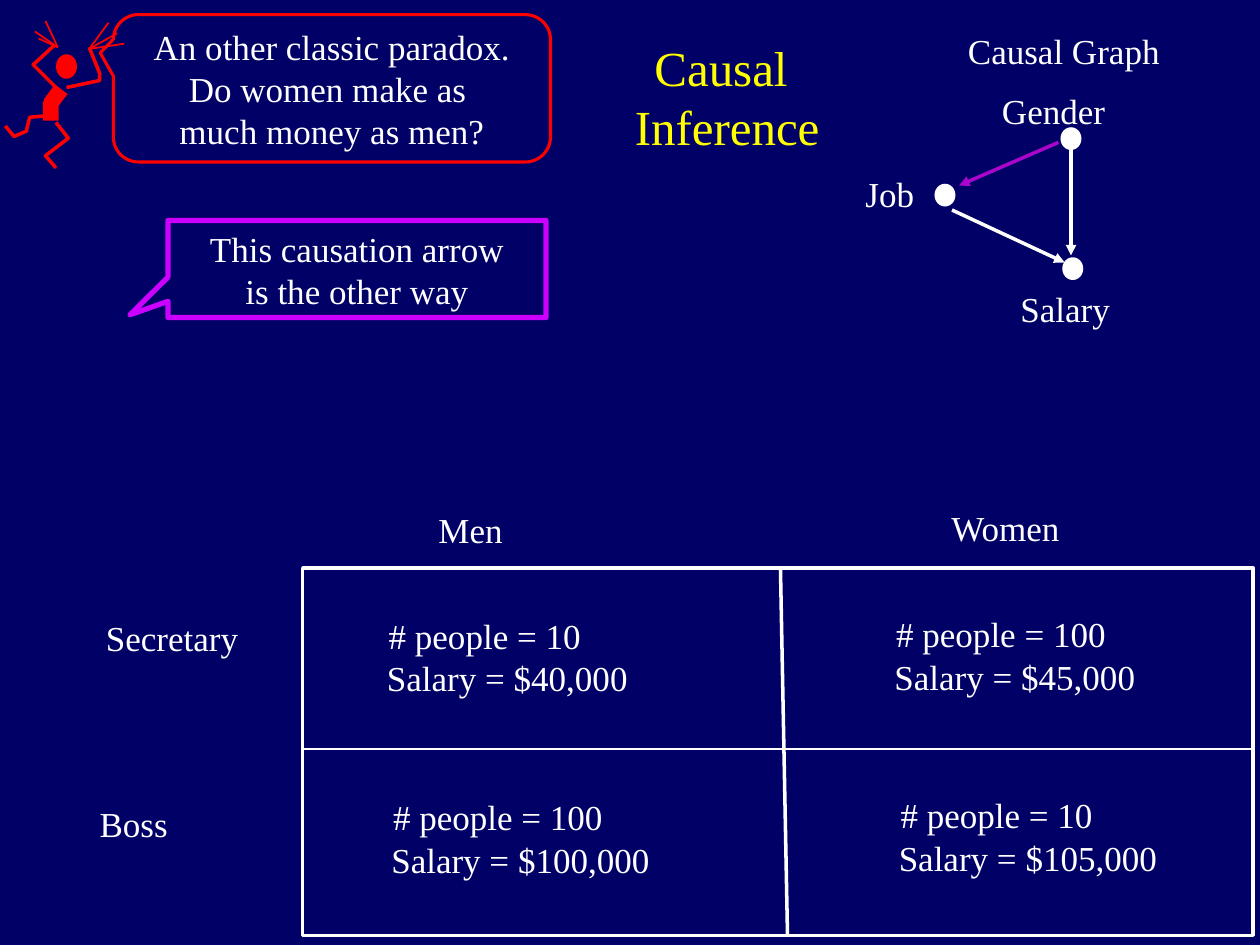
from pptx import Presentation
from pptx.dml.color import RGBColor
from pptx.enum.shapes import MSO_CONNECTOR, MSO_SHAPE
from pptx.enum.text import MSO_ANCHOR as ANCHOR, PP_ALIGN as ALIGN
from pptx.oxml.ns import qn
from pptx.util import Pt
from lxml import etree

COLOURS = {
    "navy": "000066", "white": "FFFFFF", "yellow": "FFFF00",
    "red": "FF0000", "purple": "AA05CB", "magenta": "CC00FF",
}
COLOURS = {name: RGBColor.from_string(value) for name, value in COLOURS.items()}

deck = Presentation()
deck.slide_width, deck.slide_height = Pt(720), Pt(540)
page = deck.slides.add_slide(deck.slide_layouts[6])
page.background.fill.solid()
page.background.fill.fore_color.rgb = COLOURS["navy"]


def write(shape, lines, size=20, colour="white", align=ALIGN.LEFT, spacing=None, wrap=True):
    frame = shape.text_frame
    frame.word_wrap = wrap
    para = frame.paragraphs[0]
    para.alignment = align
    para.line_spacing = spacing
    for number, line in enumerate(lines):
        if number:
            para.add_line_break()
        span = para.add_run()
        span.text = line
        span.font.size = Pt(size)
        span.font.name = "Times New Roman"
        span.font.color.rgb = COLOURS[colour]


def draw_line(start, end, colour="white", width=2, arrow=False):
    line = page.shapes.add_connector(
        MSO_CONNECTOR.STRAIGHT, *[Pt(value) for value in (*start, *end)])
    line.line.color.rgb = COLOURS[colour]
    line.line.width = Pt(width)
    properties = line._element.spPr
    if arrow:
        etree.SubElement(properties.find(qn("a:ln")), qn("a:tailEnd"), type="triangle")
    etree.SubElement(properties, qn("a:effectLst"))


# Title
title = page.shapes.add_textbox(Pt(355), Pt(18), Pt(121), Pt(75))
write(title, ["Causal ", "Inference"], 28, "yellow", ALIGN.CENTER, wrap=False)

# Panicking figure: body and limbs as bent strokes, then hair
for points, width in [
    ([(35, 51), (29, 59), (29, 69)], 9),
    ([(38, 50), (57, 46), (57, 42), (51, 27)], 2),
    ([(33, 51), (19, 37), (31, 26)], 2),
    ([(32, 70), (39, 79), (26, 89), (32, 96)], 2),
    ([(29, 66), (17, 67), (15, 75), (8, 78), (3, 72)], 2),
]:
    builder = page.shapes.build_freeform(*points[0], scale=Pt(1))
    builder.add_line_segments(points[1:], close=False)
    limb = builder.convert_to_shape()
    limb.shadow.inherit = False
    limb.fill.background()
    limb.line.color.rgb = COLOURS["red"]
    limb.line.width = Pt(width)
for root, tips in [
    ((33, 27), [(22, 22), (20, 18), (26, 12)]),
    ((51, 28), [(62, 13), (67, 19), (71, 25)]),
]:
    for tip in tips:
        draw_line(root, tip, "red", 1)

# Speech callouts
for kind, bounds, adjustments, colour, width, lines in [
    (MSO_SHAPE.ROUNDED_RECTANGULAR_CALLOUT, (64.8, 8.4, 249.8, 84.2), (-0.53, -0.24, 0.17),
     "red", 1.75, ["An other classic paradox.", "Do women make as ", "much money as men?"]),
    (MSO_SHAPE.RECTANGULAR_CALLOUT, (96, 126, 216, 55.5), (-0.6, 0.47),
     "magenta", 3, ["This causation arrow", "is the other way"]),
]:
    callout = page.shapes.add_shape(kind, *[Pt(value) for value in bounds])
    for index, value in enumerate(adjustments):
        callout.adjustments[index] = value
    callout.shadow.inherit = False
    callout.fill.background()
    callout.line.color.rgb = COLOURS[colour]
    callout.line.width = Pt(width)
    callout.text_frame.vertical_anchor = ANCHOR.MIDDLE
    write(callout, lines, align=ALIGN.CENTER)

# Head of the figure and nodes of the causal graph
for left, top, width, height, colour in [
    (32, 31, 12, 14, "red"), (606, 72.7, 12, 13, "white"),
    (534, 105, 12, 13, "white"), (607, 147, 12, 13, "white"),
]:
    disc = page.shapes.add_shape(MSO_SHAPE.OVAL, Pt(left), Pt(top), Pt(width), Pt(height))
    disc.shadow.inherit = False
    disc.fill.solid()
    disc.fill.fore_color.rgb = COLOURS[colour]
    disc.line.fill.background()

# Arrows of the causal graph
draw_line((612, 78), (612, 146), arrow=True)
draw_line((544, 120), (608.4, 150), arrow=True)
draw_line((604.8, 81.4), (548, 106), "purple", arrow=True)

# Grid of salaries, with a slightly slanted divider
grid = page.shapes.add_shape(MSO_SHAPE.RECTANGLE, Pt(173), Pt(324.5), Pt(543), Pt(210))
grid.shadow.inherit = False
grid.fill.background()
grid.line.color.rgb = COLOURS["white"]
grid.line.width = Pt(2)
draw_line((446, 324.5), (450, 534.5))
draw_line((173, 428), (716, 428), width=0.75)

# Labels: text, left, top, width, height
labels = [
    ("Causal Graph", 546, 18, 156, 38), ("Gender", 565.5, 52, 114, 38),
    ("Job", 487.5, 99.5, 119, 38), ("Salary", 576, 165.5, 114, 38),
    ("Men", 243.5, 291.8, 147, 38), ("Women", 536.5, 290.8, 147, 38),
    ("Secretary", 53.5, 353.5, 147, 38), ("Boss", 49.8, 459.5, 102, 38),
]
for people, salary, left, top in [
    ("10", "$40,000", 215, 352), ("100", "$45,000", 505, 351),
    ("100", "$100,000", 217.5, 455.5), ("10", "$105,000", 507.5, 454.5),
]:
    labels.append((f"# people = {people}", left, top, 259, 38))
    labels.append((f"Salary = {salary}", left - 1, top + 24.5, 259, 25))
for text, *bounds in labels:
    box = page.shapes.add_textbox(*[Pt(value) for value in bounds])
    write(box, [text], spacing=0.8)

deck.save("out.pptx")
